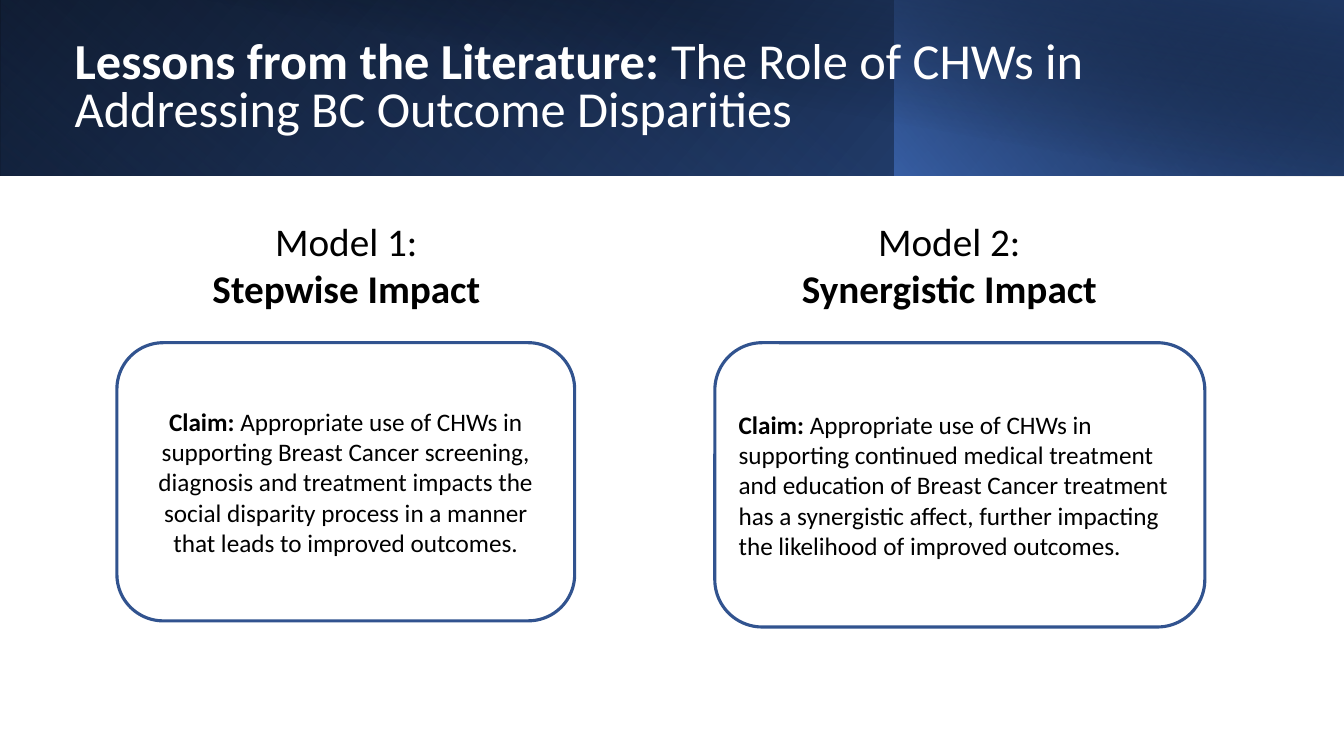
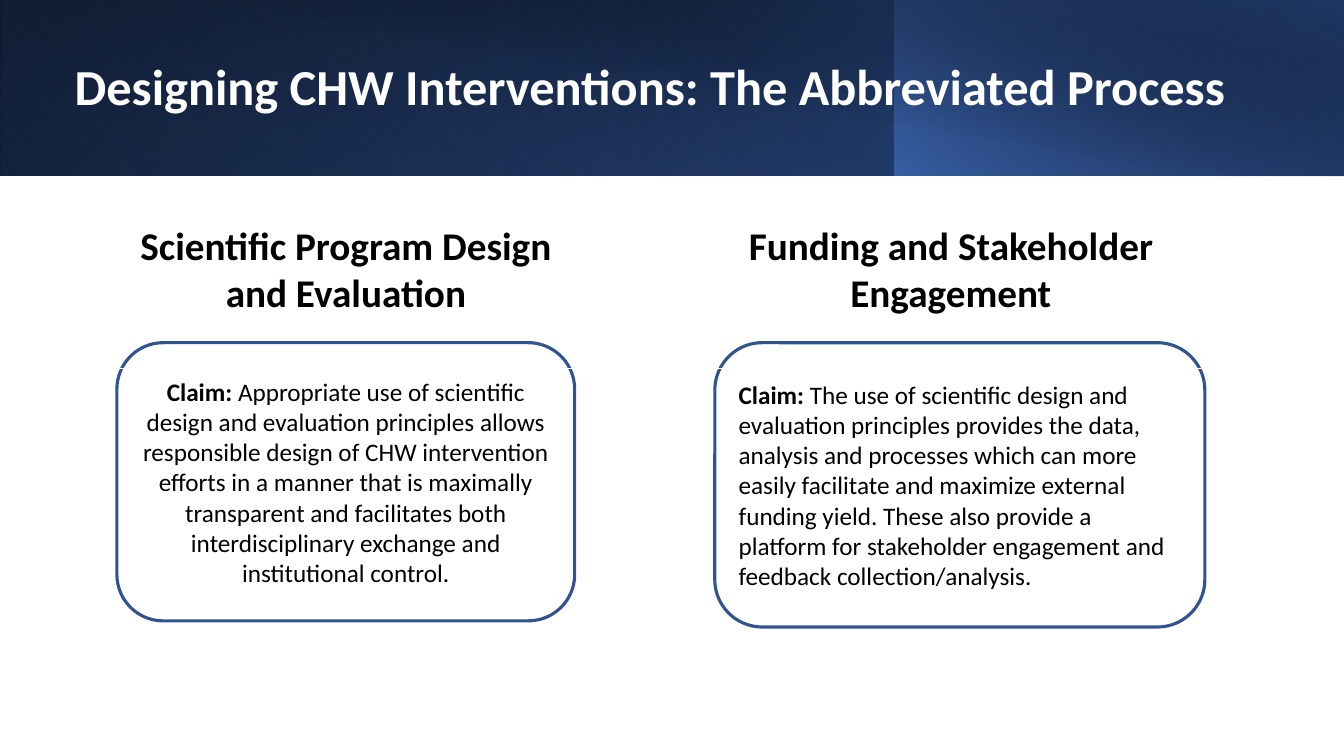
from lxml import etree
from pptx import Presentation
from pptx import util as u
from pptx.dml import color
from pptx.enum import shapes, text
from pptx.oxml import ns

COLORS = {
    "white": "FFFFFF",
    "black": "000000",
    "outline": "31538F",
    "blue": "4472C4",
    "deep_blue": "2F5496",
    "navy": "1F3864",
}
FONT = "Calibri"
TITLE_BOX = (0.64, 0.32, 11.68, 1.13)
CLAIM_BOXES = ((1.16, 3.4, 4.54, 2.76), (7.09, 3.4, 4.86, 2.82))
CLAIM_ALIGNS = (text.PP_ALIGN.CENTER, text.PP_ALIGN.LEFT)

BANDS = (
    {"box": (0, 0, 13.33, 1.74), "flip": True, "turn": 0, "angle": 140,
     "stops": ((0, "black", 100), (100, "deep_blue", 100))},
    {"box": (0, 0, 8.88, 1.74), "flip": True, "turn": 180, "angle": 230,
     "stops": ((0, "blue", 0), (20, "blue", 0), (100, "navy", 55))},
    {"box": (8.87, 0, 4.46, 1.74), "flip": True, "turn": 0, "angle": 220,
     "stops": ((0, "blue", 65), (100, "black", 29))},
    {"box": (0.5, 0, 12.83, 1.75), "flip": False, "turn": 0, "angle": 280,
     "stops": ((0, "black", 0), (50, "black", 0), (99, "navy", 51), (100, "navy", 51))},
)

SLIDES = (
    {
        "title": (("Lessons from the Literature:", True),
                  (" The Role of CHWs in Addressing BC Outcome Disparities", False)),
        "title_spacing": 0.8,
        "heading_boxes": ((1.51, 2.11, 3.85, 1.04), (7.49, 2.11, 3.85, 1.04)),
        "headings": (
            ((("Model 1:", False),), (("Stepwise Impact", True),)),
            ((("Model 2:", False),), (("Synergistic Impact", True),)),
        ),
        "claims": (
            "Appropriate use of CHWs in supporting Breast Cancer screening, diagnosis and "
            "treatment impacts the social disparity process in a manner that leads to "
            "improved outcomes.",
            "Appropriate use of CHWs in supporting continued medical treatment and education "
            "of Breast Cancer treatment has a synergistic affect, further impacting the "
            "likelihood of improved outcomes.",
        ),
    },
    {
        "title": (("Designing CHW Interventions: The Abbreviated Process", True),),
        "title_spacing": 0.9,
        "heading_boxes": ((1.12, 2.15, 4.62, 1.51), (6.62, 2.15, 5.62, 1.51)),
        "headings": (
            ((("Scientific Program Design and Evaluation", True),),),
            ((("Funding and Stakeholder Engagement", True),),),
        ),
        "claims": (
            "Appropriate use of scientific design and evaluation principles allows "
            "responsible design of CHW intervention efforts in a manner that is maximally "
            "transparent and facilitates both interdisciplinary exchange and institutional "
            "control.",
            "The use of scientific design and evaluation principles provides the data, "
            "analysis and processes which can more easily facilitate and maximize external "
            "funding yield. These also provide a platform for stakeholder engagement and "
            "feedback collection/analysis.",
        ),
    },
)


def rgb(name):
    """Return the named colour."""
    return color.RGBColor.from_string(COLORS[name])


def inches(box):
    """Convert a box of numbers to lengths."""
    return [u.Inches(length) for length in box]


def write(frame, paragraphs, size, ink, align, spacing=None):
    """Fill a text frame with paragraphs of (words, bold) runs."""
    for index, runs in enumerate(paragraphs):
        paragraph = frame.add_paragraph() if index else frame.paragraphs[0]
        paragraph.alignment = align
        if spacing:
            paragraph.line_spacing = spacing
        for words, bold in runs:
            run = paragraph.add_run()
            run.text = words
            run.font.name = FONT
            run.font.size = u.Pt(size)
            run.font.bold = bold
            run.font.color.rgb = rgb(ink)


def add_panel(slide, preset, box, fill=None, line=None, width=0.75):
    """Add a flat shape with an optional fill and outline."""
    panel = slide.shapes.add_shape(preset, *inches(box))
    panel.shadow.inherit = False
    if fill:
        panel.fill.solid()
        panel.fill.fore_color.rgb = rgb(fill)
    else:
        panel.fill.background()
    if line:
        panel.line.color.rgb = rgb(line)
        panel.line.width = u.Pt(width)
    else:
        panel.line.fill.background()
    return panel


def set_gradient(panel, stops, angle):
    """Give a shape a linear gradient of (position, colour, opacity) stops."""
    gradient = etree.Element(ns.qn("a:gradFill"), rotWithShape="1")
    stop_list = etree.SubElement(gradient, ns.qn("a:gsLst"))
    for position, name, opacity in stops:
        stop = etree.SubElement(stop_list, ns.qn("a:gs"), pos=str(position * 1000))
        tone = etree.SubElement(stop, ns.qn("a:srgbClr"), val=COLORS[name])
        if opacity < 100:
            etree.SubElement(tone, ns.qn("a:alpha"), val=str(opacity * 1000))
    etree.SubElement(gradient, ns.qn("a:lin"), ang=str(angle * 60000), scaled="0")
    properties = panel._element.spPr
    properties.replace(properties.find(ns.qn("a:noFill")), gradient)


def build_layout(layout, slide):
    """Place the title and the header bands on the layout."""
    title = layout.placeholders[0]
    title.left, title.top, title.width, title.height = inches(TITLE_BOX)
    for order, band in enumerate(BANDS):
        panel = add_panel(slide, shapes.MSO_SHAPE.RECTANGLE, band["box"])
        panel.rotation = band["turn"]
        set_gradient(panel, band["stops"], band["angle"])
        element = panel._element
        if band["flip"]:
            element.spPr.find(ns.qn("a:xfrm")).set("flipH", "1")
        element.nvSpPr.cNvPr.set("id", str(20 + order))
        layout.shapes._spTree.insert(2 + order, element)


def add_title(slide, runs, spacing):
    """Fill the title placeholder."""
    frame = slide.shapes.title.text_frame
    frame.auto_size = text.MSO_AUTO_SIZE.NONE
    frame.vertical_anchor = text.MSO_ANCHOR.MIDDLE
    write(frame, (runs,), 36, "white", text.PP_ALIGN.LEFT, spacing)


def add_claim(slide, box, claim, align):
    """Add a rounded box that states a claim."""
    panel = add_panel(slide, shapes.MSO_SHAPE.ROUNDED_RECTANGLE, box, "white", "outline", 2.25)
    write(panel.text_frame, ((("Claim:", True), (" " + claim, False)),), 18, "black", align)


def add_heading(slide, box, paragraphs):
    """Add the heading above a claim."""
    panel = add_panel(slide, shapes.MSO_SHAPE.RECTANGLE, box, line="white")
    panel.text_frame.vertical_anchor = text.MSO_ANCHOR.TOP
    write(panel.text_frame, paragraphs, 28, "black", text.PP_ALIGN.CENTER)


def build_slide(slide, content):
    """Build a slide that sets two claims side by side."""
    add_title(slide, content["title"], content["title_spacing"])
    for box, claim, align in zip(CLAIM_BOXES, content["claims"], CLAIM_ALIGNS):
        add_claim(slide, box, claim, align)
    for box, heading in zip(content["heading_boxes"], content["headings"]):
        add_heading(slide, box, heading)


def main():
    """Build and save the presentation."""
    deck = Presentation()
    deck.slide_width, deck.slide_height = inches((13.33, 7.5))
    layout = deck.slide_layouts.get_by_name("Title Only")
    slides = [deck.slides.add_slide(layout) for _ in SLIDES]
    build_layout(layout, slides[0])
    for slide, content in zip(slides, SLIDES):
        build_slide(slide, content)
    deck.save("out.pptx")


if __name__ == "__main__":
    main()
